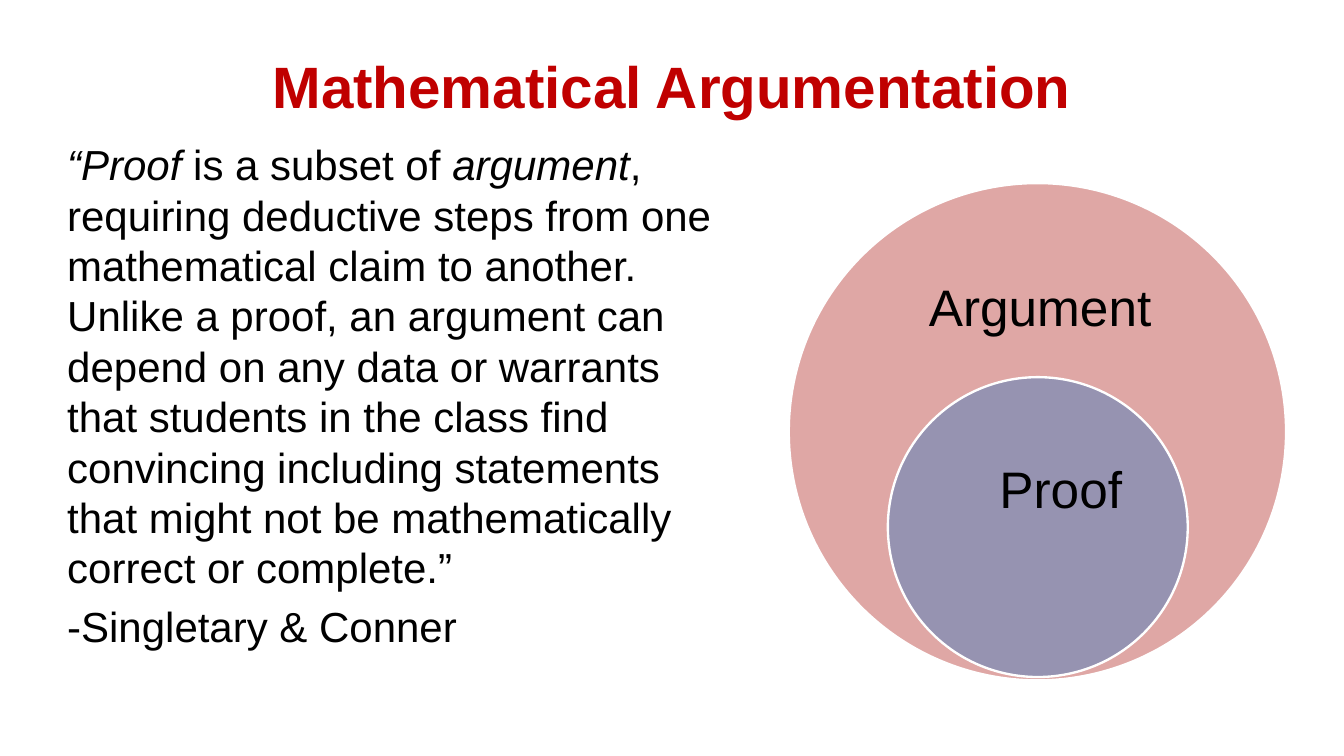
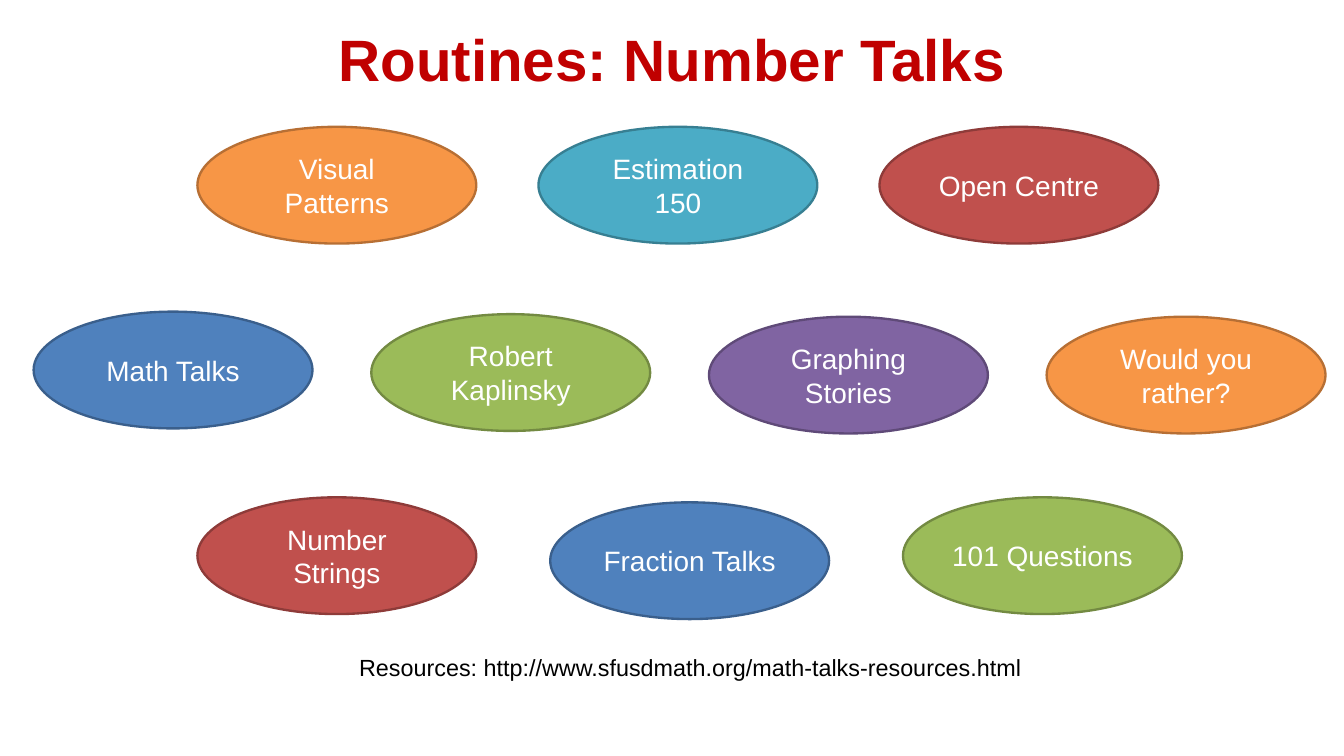
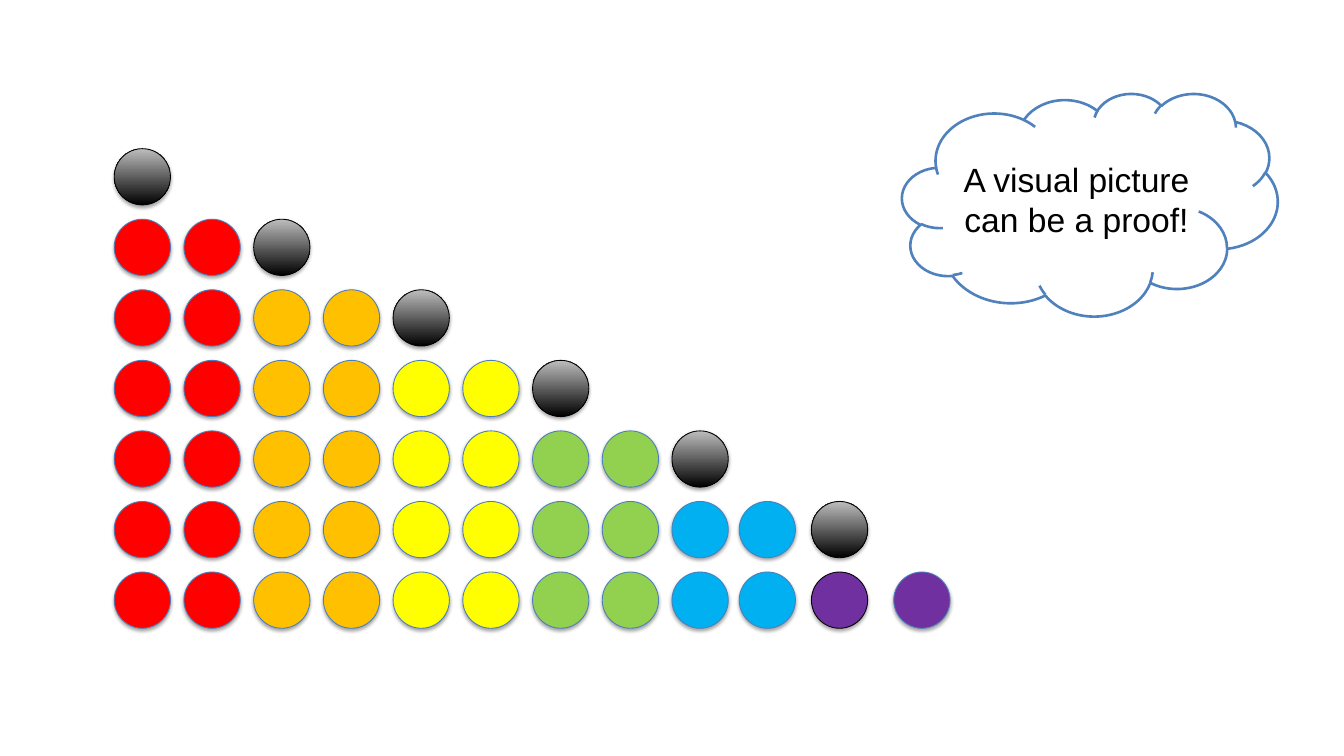
from lxml.etree import SubElement
from pptx import Presentation
from pptx.dml.color import RGBColor
from pptx.enum.shapes import MSO_SHAPE as Shape
from pptx.enum.text import MSO_ANCHOR as Anchor, MSO_AUTO_SIZE as AutoSize, PP_ALIGN as Align
from pptx.oxml.ns import qn
from pptx.util import Inches, Pt

FONT = "Arial"
BLACK, WHITE, TITLE_RED = "000000", "FFFFFF", "C00000"
ORANGE, TEAL, BRICK = "F79646", "4BACC6", "C0504D"
BLUE, GREEN, VIOLET = "4F81BD", "9BBB59", "8064A2"
OUTLINES = {ORANGE: "B76F34", TEAL: "377F92", BRICK: "8E3B39",
            BLUE: "3A5F8C", GREEN: "738A42", VIOLET: "5F4A78"}

OVAL_SIZE = (3.32, 1.39)
ROUTINE_ROWS = [
    (2.35, 4.06, [("Visual Patterns", ORANGE, 1.51), ("Estimation 150", TEAL, 1.51),
                  ("Open Centre", BRICK, 1.51)]),
    (0.4, 4.02, [("Math Talks", BLUE, 3.71), ("Robert Kaplinsky", GREEN, 3.74),
                 ("Graphing Stories", VIOLET, 3.77), ("Would you rather?", ORANGE, 3.77)]),
    (2.35, 4.2, [("Number Strings", BRICK, 5.92), ("Fraction Talks", BLUE, 5.98),
                 ("101 Questions", GREEN, 5.92)]),
]

PAIR_COLOURS = ["FF0000", "FFC000", "FFFF00", "92D050", "00B0F0", "7030A0"]
DOT_LINE = "4B7EBC"
DOT_SIZE = 0.67
DOT_LEFT, DOT_TOP = 1.36, 1.77
COLUMN_STEP, ROW_STEP = 0.83, 0.84
SHIFTED_COLUMNS = {8: 8, 9: 8.8, 11: 10.64}


def rgb(colour):
    return RGBColor.from_string(colour)


def apply(target, formats):
    for name, value in formats.items():
        setattr(target, name, value)


def add_run(paragraph, text, size, colour=BLACK, **formats):
    run = paragraph.add_run()
    run.text = text
    apply(run.font, {"name": FONT, "size": Pt(size), **formats})
    run.font.color.rgb = rgb(colour)


def place(shape, box):
    apply(shape, dict(zip(("left", "top", "width", "height"), map(Inches, box))))


def set_frame(shape, anchor=Anchor.TOP, margin=0.0):
    frame = shape.text_frame
    apply(frame, {"word_wrap": True, "auto_size": AutoSize.NONE, "vertical_anchor": anchor})
    apply(frame, {f"margin_{side}": Inches(margin) for side in ("left", "top", "right", "bottom")})
    return frame


def add_title(slide, text, top):
    title = slide.shapes.title
    place(title, (0.8, top, 14.4, 0.84))
    paragraph = set_frame(title).paragraphs[0]
    paragraph.alignment = Align.CENTER
    add_run(paragraph, text, 50, TITLE_RED, bold=True)


def add_body(slide, box, paragraphs, size):
    body = slide.placeholders[1]
    place(body, box)
    frame = set_frame(body)
    for index, runs in enumerate(paragraphs):
        paragraph = frame.add_paragraph() if index else frame.paragraphs[0]
        properties = paragraph._p.get_or_add_pPr()
        apply_indent = {"marL": "0", "indent": "0"}
        for name, value in apply_indent.items():
            properties.set(name, value)
        SubElement(properties, qn("a:buNone"))
        paragraph.space_before = Pt(0.2 * size if index else 0)
        for text, italic in runs:
            add_run(paragraph, text, size, italic=italic)


def add_label(slide, box, text, size, align=Align.LEFT, margin=0.0):
    label = slide.shapes.add_textbox(*map(Inches, box))
    paragraph = set_frame(label, margin=margin).paragraphs[0]
    paragraph.alignment = align
    add_run(paragraph, text, size)


def add_figure(slide, kind, box, fill, line, line_width, opacity=None):
    shape = slide.shapes.add_shape(kind, *map(Inches, box))
    shape.shadow.inherit = False
    shape.fill.solid()
    shape.fill.fore_color.rgb = rgb(fill)
    if opacity:
        colour = shape._element.spPr.find(qn("a:solidFill"))[0]
        SubElement(colour, qn("a:alpha"), val=str(opacity * 1000))
    shape.line.color.rgb = rgb(line)
    shape.line.width = Pt(line_width)
    return shape


def write_inside(shape, text, size, colour):
    frame = shape.text_frame
    apply(frame, {"word_wrap": True, "vertical_anchor": Anchor.MIDDLE})
    paragraph = frame.paragraphs[0]
    paragraph.alignment = Align.CENTER
    add_run(paragraph, text, size, colour)


def add_drop_shadow(shape):
    effects = shape._element.spPr.find(qn("a:effectLst"))
    shadow = SubElement(effects, qn("a:outerShdw"), blurRad=str(Pt(3.1)), dist=str(Pt(1.8)),
                        dir="5400000", rotWithShape="0")
    colour = SubElement(shadow, qn("a:srgbClr"), val=BLACK)
    SubElement(colour, qn("a:alpha"), val="35000")


def add_dot(slide, left, row, fill, line=DOT_LINE):
    box = (left, DOT_TOP + row * ROW_STEP, DOT_SIZE, DOT_SIZE)
    dot = add_figure(slide, Shape.OVAL, box, fill, line, 0.75)
    add_drop_shadow(dot)
    return dot


def add_marker(slide, left, row):
    fill = add_dot(slide, left, row, BLACK, BLACK).fill
    fill.gradient()
    fill.gradient_angle = 90
    for stop, position, colour in zip(fill.gradient_stops, (0, 1), (BLACK, "BDBDBD")):
        stop.position = position
        stop.color.rgb = rgb(colour)


def build_argumentation(slide):
    add_title(slide, "Mathematical Argumentation", 0.6)
    quotation = [
        ("“Proof", True), (" is a subset of ", False), ("argument", True),
        (", requiring deductive steps from one mathematical claim to another. Unlike a proof, "
         "an argument can depend on any data or warrants that students in the class find "
         "convincing including statements that might not be mathematically correct or "
         "complete.”", False),
    ]
    add_body(slide, (0.8, 1.65, 7.77, 5.94), [quotation, [("-Singletary & Conner", False)]], 36)
    for box, colour in (((9.39, 2.18, 5.92, 5.92), BRICK), ((10.57, 4.49, 3.57, 3.57), BLUE)):
        add_figure(slide, Shape.OVAL, box, colour, WHITE, 2, opacity=50)
    for text, left, top in (("Argument", 10.96, 3.18), ("Proof", 11.8, 5.34)):
        add_label(slide, (left, top, 3.09, 0.84), text, 44, margin=0.1 if text else 0)


def build_routines(slide):
    add_title(slide, "Routines: Number Talks", 0.28)
    for left, step, routines in ROUTINE_ROWS:
        for index, (text, colour, top) in enumerate(routines):
            box = (left + index * step, top, *OVAL_SIZE)
            oval = add_figure(slide, Shape.OVAL, box, colour, OUTLINES[colour], 2)
            write_inside(oval, text, 24, WHITE)
    add_label(slide, (1.12, 7.78, 14.2, 0.34),
              "Resources: http://www.sfusdmath.org/math-talks-resources.html", 20, Align.CENTER)


def build_visual_proof(slide):
    last_row = len(PAIR_COLOURS)
    for row in range(last_row + 1):
        for column in range(2 * row):
            left = SHIFTED_COLUMNS.get(column, DOT_LEFT + column * COLUMN_STEP)
            line = BLACK if column == 10 else DOT_LINE
            add_dot(slide, left, row, PAIR_COLOURS[column // 2], line)
        if row < last_row:
            add_marker(slide, DOT_LEFT + 2 * row * COLUMN_STEP, row)
    cloud = add_figure(slide, Shape.CLOUD, (10.74, 1.11, 4.47, 2.65), WHITE, BLUE, 2.25)
    write_inside(cloud, "A visual picture can be a proof!", 28.8, BLACK)


def main():
    presentation = Presentation()
    apply(presentation, {"slide_width": Inches(16), "slide_height": Inches(9)})
    for layout, build in ((1, build_argumentation), (5, build_routines), (6, build_visual_proof)):
        build(presentation.slides.add_slide(presentation.slide_layouts[layout]))
    presentation.save("out.pptx")


if __name__ == "__main__":
    main()
